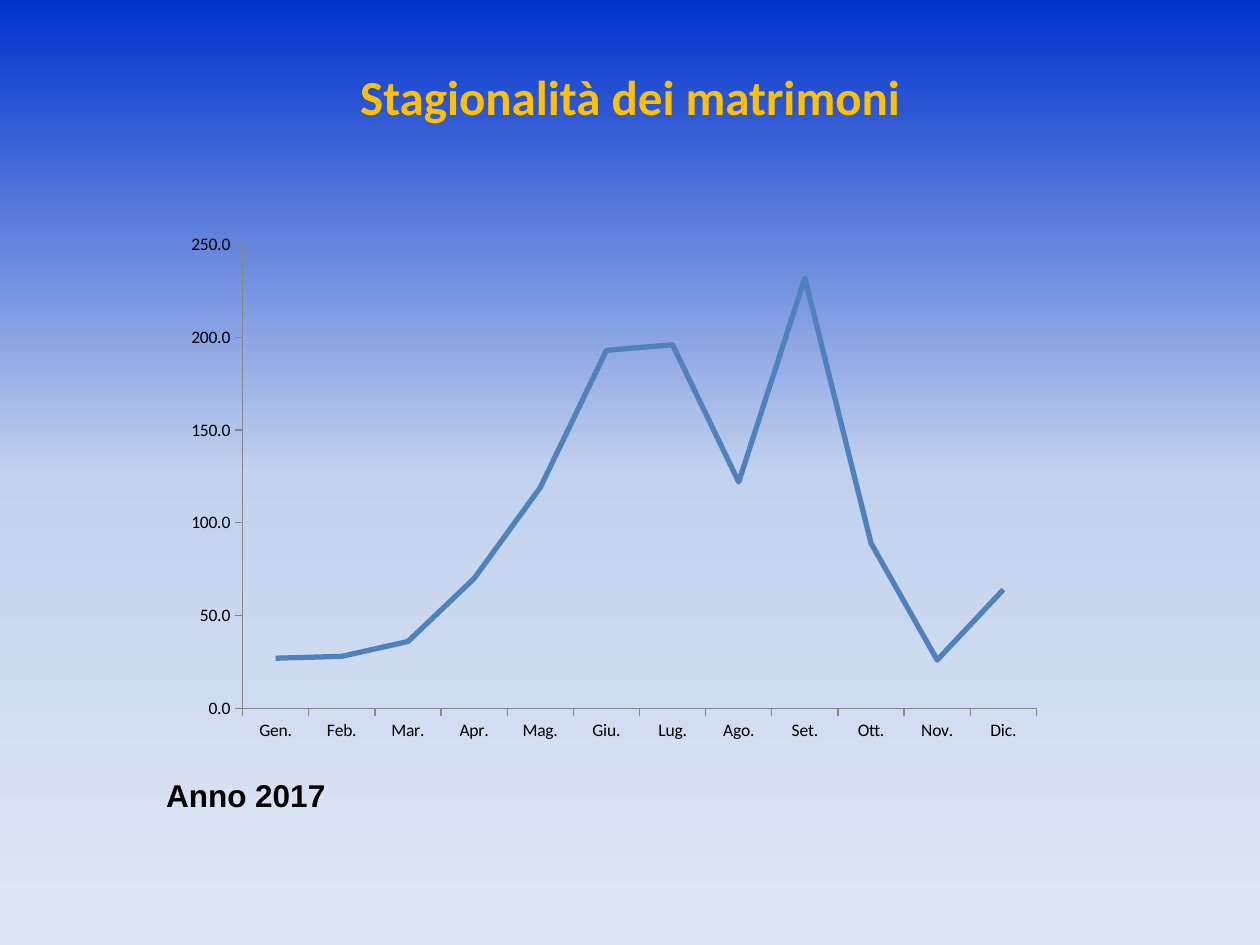
from copy import deepcopy
from dataclasses import dataclass

from pptx import Presentation
from pptx.chart.data import CategoryChartData as ChartData
from pptx.dml.color import RGBColor as Rgb
from pptx.enum.chart import XL_CHART_TYPE as ChartType, XL_TICK_MARK as Tick
from pptx.enum.text import MSO_ANCHOR as Anchor, MSO_AUTO_SIZE as AutoSize, PP_ALIGN as Align
from pptx.oxml.ns import qn
from pptx.util import Cm, Pt


@dataclass(frozen=True)
class Theme:
    """Colours, fonts and type sizes of the deck."""
    title: Rgb = Rgb.from_string("FFC000")
    text: Rgb = Rgb.from_string("000000")
    line: Rgb = Rgb.from_string("4F81BD")
    axis: Rgb = Rgb.from_string("868686")
    gradient: tuple = ((0, "0033CC"), (0.5, "C2D1ED"), (1, "E1E8F5"))
    heading_font: str = "Calibri"
    note_font: str = "Arial"
    title_size: Pt = Pt(28)
    note_size: Pt = Pt(18)
    chart_size: Pt = Pt(10)
    line_width: Pt = Pt(3)


def apply(target, formats):
    """Set each attribute named in formats on target."""
    for name, value in formats.items():
        setattr(target, name, value)


class SlideBuilder:
    """Holds the theme and the current slide and adds elements to it."""

    def __init__(self, page, theme):
        self.page = page
        self.theme = theme

    def background(self):
        """Fill the background with the vertical theme gradient."""
        fill = self.page.background.fill
        fill.gradient()
        fill.gradient_angle = 270
        stop_list = next(self.page.element.iter(qn("a:gsLst")))
        stop_list.append(deepcopy(stop_list[0]))
        for stop, (position, colour) in zip(fill.gradient_stops, self.theme.gradient):
            stop.position = position
            stop.color.rgb = Rgb.from_string(colour)

    def bold_text(self, box, text, align, font, colour):
        """Put one bold formatted paragraph into a box."""
        para = box.text_frame.paragraphs[0]
        para.alignment = align
        span = para.add_run()
        span.text = text
        apply(span.font, {"bold": True, **font})
        span.font.color.rgb = colour

    def title(self, text, left, top, width, height):
        """Place and fill the title placeholder."""
        box = self.page.shapes.title
        apply(box, {"left": Cm(left), "top": Cm(top), "width": Cm(width), "height": Cm(height)})
        apply(box.text_frame, {"vertical_anchor": Anchor.MIDDLE, "word_wrap": True})
        font = {"name": self.theme.heading_font, "size": self.theme.title_size}
        self.bold_text(box, text, Align.CENTER, font, self.theme.title)

    def note(self, text, left, top, width, height):
        """Add a bold text box."""
        box = self.page.shapes.add_textbox(Cm(left), Cm(top), Cm(width), Cm(height))
        apply(box.text_frame, {"word_wrap": True, "auto_size": AutoSize.SHAPE_TO_FIT_TEXT})
        font = {"name": self.theme.note_font, "size": self.theme.note_size}
        self.bold_text(box, text, Align.LEFT, font, self.theme.text)

    def line_chart(self, name, values, left, top, width, height):
        """Add a line chart with one series."""
        data = ChartData()
        data.categories = list(values)
        data.add_series(name, list(values.values()))
        chart = self.page.shapes.add_chart(
            ChartType.LINE, Cm(left), Cm(top), Cm(width), Cm(height), data).chart
        apply(chart, {"has_legend": False, "has_title": False})
        apply(chart.font, {"name": self.theme.heading_font, "size": self.theme.chart_size})
        chart.font.color.rgb = self.theme.text
        chart.plots[0].vary_by_categories = False
        for axis in (chart.category_axis, chart.value_axis):
            apply(axis, {"has_major_gridlines": False, "major_tick_mark": Tick.OUTSIDE,
                         "minor_tick_mark": Tick.NONE})
            axis.format.line.color.rgb = self.theme.axis
        apply(chart.value_axis, {"minimum_scale": 0, "maximum_scale": 250, "major_unit": 50})
        apply(chart.value_axis.tick_labels,
              {"number_format": "0.0", "number_format_is_linked": False})
        series = chart.plots[0].series[0]
        series.smooth = False
        series.format.line.color.rgb = self.theme.line
        series.format.line.width = self.theme.line_width


def main():
    """Build the deck and save it."""
    deck = Presentation()
    apply(deck, {"slide_width": Cm(25.4), "slide_height": Cm(19.05)})
    slide = SlideBuilder(deck.slides.add_slide(deck.slide_layouts[5]), Theme())
    weddings = {
        "Gen.": 27, "Feb.": 28, "Mar.": 36, "Apr.": 70, "Mag.": 119, "Giu.": 193,
        "Lug.": 196, "Ago.": 122, "Set.": 232, "Ott.": 89, "Nov.": 26, "Dic.": 64,
    }
    slide.background()
    slide.title("Stagionalità dei matrimoni", 1.27, 0.76, 22.86, 2.36)
    slide.note("Anno 2017", 3.1, 15.52, 6.8, 1.02)
    slide.line_chart("Series 1", weddings, 3.5, 4.52, 17.75, 10.62)
    deck.save("out.pptx")


if __name__ == "__main__":
    main()
